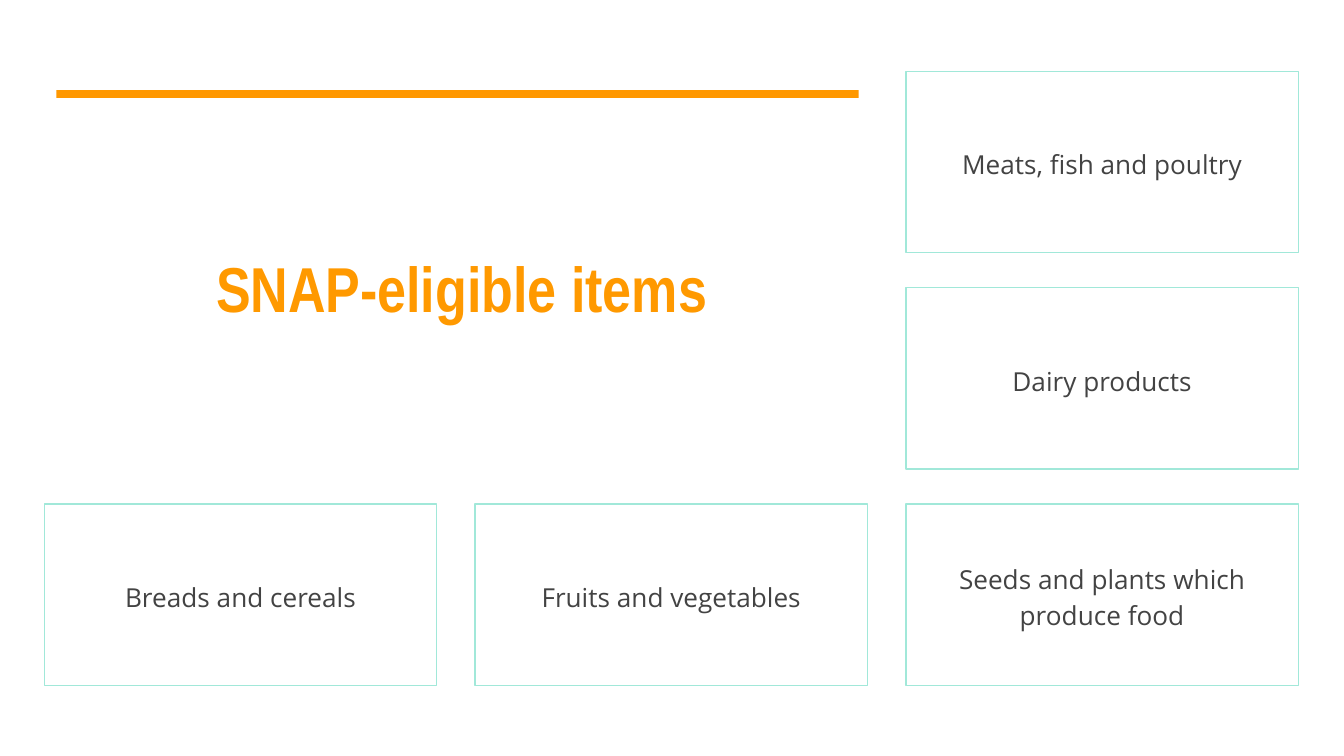
from pptx import Presentation
from pptx.dml.color import RGBColor
from pptx.enum.shapes import MSO_SHAPE
from pptx.enum.text import MSO_ANCHOR, PP_ALIGN
from pptx.util import Inches, Pt

RECT = MSO_SHAPE.RECTANGLE
MIDDLE = MSO_ANCHOR.MIDDLE
CENTER = PP_ALIGN.CENTER

COLORS = {"bar": "FF9800", "title": "FF9900", "edge": "A1E8D9", "text": "434343"}
TITLE_FONT = {"name": "Arial Narrow", "size": Pt(34), "bold": True}
CARD_FONT = {"name": "Open Sans", "size": Pt(14), "bold": False}
CARD_PARA = {"line_spacing": 1.15, "space_after": Pt(16)}

WIDTH = 10
HEIGHT = WIDTH * 9 / 16
LEFT, RIGHT = 0.33, 9.66
TOP, BOTTOM = 0.53, 5.1
CARD_W, CARD_H = 2.92, 1.35
STEP_X = (RIGHT - LEFT - CARD_W) / 2
STEP_Y = (BOTTOM - TOP - CARD_H) / 2
CARDS = [
    ("Breads and cereals", 0, 2),
    ("Fruits and vegetables", 1, 2),
    ("Meats, fish and poultry", 2, 0),
    ("Dairy products", 2, 1),
    ("Seeds and plants which produce food", 2, 2),
]


def rgb(key):
    return RGBColor.from_string(COLORS[key])


def apply(item, values):
    for key, value in values.items():
        setattr(item, key, value)


def add_rect(slide, box):
    shape = slide.shapes.add_shape(RECT, *map(Inches, box))
    shape.shadow.inherit = False
    return shape


def put_text(shape, text, font, color, para=None):
    frame = shape.text_frame
    inset = Inches(0.1)
    apply(frame, {
        "word_wrap": True, "vertical_anchor": MIDDLE,
        "margin_left": inset, "margin_right": inset,
        "margin_top": inset, "margin_bottom": inset,
    })
    line = frame.paragraphs[0]
    apply(line, {"alignment": CENTER, **(para or {})})
    run = line.add_run()
    run.text = text
    apply(run.font, font)
    run.font.color.rgb = rgb(color)


def add_header(slide, box):
    left, top, width, height = box
    bar = add_rect(slide, (left + 0.09, top, 5.97, 0.06))
    bar.fill.solid()
    bar.fill.fore_color.rgb = rgb("bar")
    bar.line.fill.background()
    area = (left, top + 0.14, width, height - 0.14)
    title = slide.shapes.add_textbox(*map(Inches, area))
    put_text(title, "SNAP-eligible items", TITLE_FONT, "title")


def add_cards(slide, left, top):
    for text, col, row in CARDS:
        box = (left + col * STEP_X, top + row * STEP_Y, CARD_W, CARD_H)
        card = add_rect(slide, box)
        card.fill.background()
        card.line.color.rgb = rgb("edge")
        card.line.width = Pt(0.75)
        put_text(card, text, CARD_FONT, "text", CARD_PARA)


def main():
    deck = Presentation()
    deck.slide_width = Inches(WIDTH)
    deck.slide_height = Inches(HEIGHT)
    slide = deck.slides.add_slide(deck.slide_layouts[6])
    add_header(slide, (LEFT, 0.67, 6.21, 2.79))
    add_cards(slide, LEFT, TOP)
    deck.save("out.pptx")


if __name__ == "__main__":
    main()
